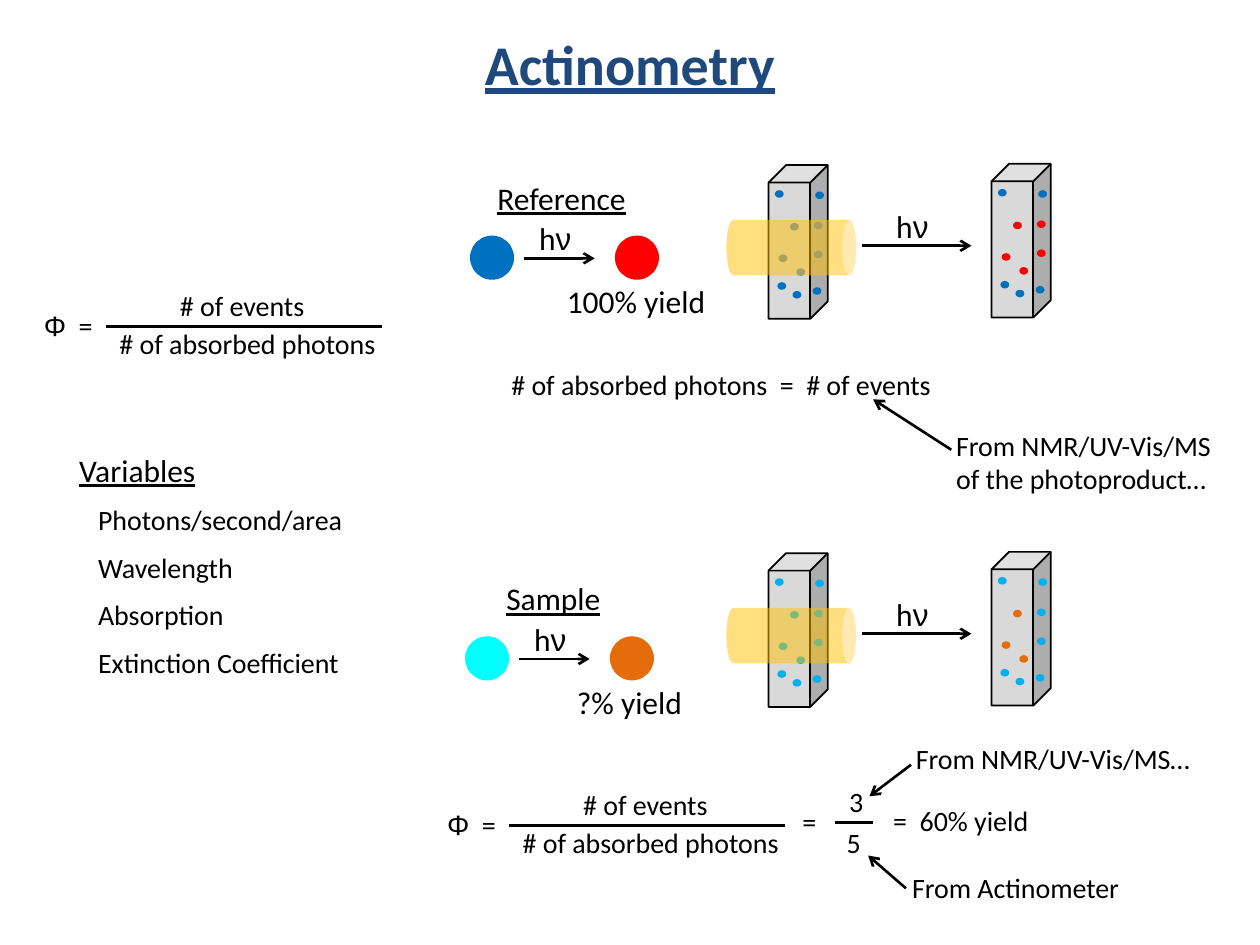
from lxml import etree
from pptx import Presentation
from pptx.dml import color
from pptx.enum import shapes, text
from pptx.oxml import ns
from pptx.util import Inches, Pt

COLORS = dict(black="000000", title="1F497D", glass="D9D9D9", beam="FFC000",
              blue="0070C0", steel="4F81BD", red="FF0000", sky="00B0F0",
              cyan="00FFFF", orange="E46C0A")
SHAPE = shapes.MSO_SHAPE

# Molecule places, measured from the corner of the cuvette
MOLECULES = [(0.05, 0.2), (0.17, 0.46), (0.08, 0.71), (0.19, 1.0), (0.07, 0.93),
             (0.36, 0.45), (0.36, 0.68), (0.35, 0.97), (0.22, 0.82), (0.37, 0.21)]
EXPERIMENTS = [
    dict(top=1.31, idle="blue", lit="steel", product="red", reacted={1, 2, 5, 6, 8},
         start="blue", scheme=(3.73, 1.87), name=("Reference", 3.85, 1.23),
         result=("100% yield", 4.4, 1.31)),
    dict(top=4.39, idle="sky", lit="sky", product="orange", reacted={1, 2, 8},
         start="cyan", scheme=(3.69, 5.05), name=("Sample", 3.92, 0.96),
         result=("?% yield", 4.48, 1.05)),
]
VARIABLES = ["Photons/second/area", "Wavelength", "Absorption", "Extinction Coefficient"]
YIELD_FORMULAS = [(0.25, 2.4), (3.45, 6.36)]
# Wording, left, top, width
RATIO = [("= ", 6.27, 6.34, 0.36), ("3", 6.64, 6.18, 0.32), ("5", 6.62, 6.5, 0.32)]
STATEMENTS = [
    ("# of absorbed photons  =  # of events", 3.96, 2.87, 3.58),
    ("=  60% yield", 6.99, 6.33, 1.29),
    ("From Actinometer", 7.14, 6.86, 1.87),
    ("From NMR/UV-Vis/MS…", 7.17, 5.84, 2.42),
]
POINTERS = [((7.19, 7.05), (6.89, 6.79)), ((7.23, 6.07), (6.9, 6.32)),
            ((7.55, 3.57), (6.93, 3.17))]

deck = Presentation()
deck.slide_width, deck.slide_height = Inches(10), Inches(7.5)
slide = deck.slides.add_slide(deck.slide_layouts[6])


def rgb(name):
    """Look up a named colour."""
    return color.RGBColor.from_string(COLORS[name])


def style(run, size, font="Calibri", ink="black", underline=False, bold=False):
    """Format one run."""
    run.font.size, run.font.name = Pt(size), font
    run.font.color.rgb = rgb(ink)
    run.font.underline, run.font.bold = underline, bold


def label(parent, parts, left, top, width, height=0.37, size=16, wrap=False, **look):
    """Add a text box; parts is a string or a list of (wording, font) pairs."""
    box = parent.shapes.add_textbox(*map(Inches, (left, top, width, height)))
    box.text_frame.word_wrap = wrap
    paragraph = box.text_frame.paragraphs[0]
    for wording, font in [(parts, "Calibri")] if isinstance(parts, str) else parts:
        run = paragraph.add_run()
        run.text = wording
        style(run, size, font, **look)
    return box


def solid(parent, kind, left, top, width, height, fill, outlined=False):
    """Add a filled preset shape."""
    part = parent.shapes.add_shape(kind, *map(Inches, (left, top, width, height)))
    part.shadow.inherit = False
    part.fill.solid()
    part.fill.fore_color.rgb = rgb(fill)
    if outlined:
        part.line.color.rgb, part.line.width = rgb("black"), Pt(1)
    else:
        part.line.fill.background()
    return part


def rule(parent, start, end, arrow=False):
    """Add a straight line, with an arrowhead at its end if asked."""
    line = parent.shapes.add_connector(shapes.MSO_CONNECTOR.STRAIGHT,
                                       *map(Inches, (*start, *end)))
    line.line.color.rgb, line.line.width = rgb("black"), Pt(1.5)
    if arrow:
        etree.SubElement(line.line._get_or_add_ln(), ns.qn("a:tailEnd"), type="arrow")
    etree.SubElement(line._element.spPr, ns.qn("a:effectLst"))


def light_arrow(left, top, length):
    """Add a reaction arrow with the photon symbol above it."""
    rule(slide, (left, top), (left + length, top), arrow=True)
    middle = left + length / 2
    label(slide, [("h", "Calibri"), ("ν", "Arial")], middle - 0.26, top - 0.36,
          0.53, 0.4, 18, wrap=True)


def cuvette(left, top, idle, changed, reacted):
    """Add a cuvette whose reacted molecules have another colour."""
    group = slide.shapes.add_group_shape()
    glass = solid(group, SHAPE.CUBE, left, top, 0.47, 1.22, "glass", outlined=True)
    glass.adjustments[0] = 0.295
    for index, (dx, dy) in enumerate(MOLECULES):
        solid(group, SHAPE.OVAL, left + dx, top + dy, 0.07, 0.06,
              changed if index in reacted else idle)


def experiment(top, idle, lit, product, reacted, start, scheme, name, result):
    """Add the irradiated cuvettes and the reaction scheme."""
    cuvette(6.1, top, idle, lit, reacted)
    light_arrow(6.84, top + 0.64, 0.87)
    cuvette(7.87, top - 0.01, idle, product, reacted)
    beam = solid(slide, SHAPE.CAN, 6.06, top + 0.14, 0.44, 1.03, "beam")
    beam.rotation = 90
    tint = beam._element.spPr.find(".//" + ns.qn("a:srgbClr"))
    etree.SubElement(tint, ns.qn("a:alpha"), val="50000")

    left, row = scheme
    solid(slide, SHAPE.OVAL, left, row, 0.35, 0.35, start)
    light_arrow(left + 0.43, row + 0.18, 0.56)
    solid(slide, SHAPE.OVAL, left + 1.15, row, 0.35, 0.35, product)
    for (wording, x, width), dy, underline in ((name, -0.5, True), (result, 0.32, False)):
        label(slide, wording, x, row + dy, width, 0.4, 18, underline=underline)


def yield_formula(left, top):
    """Add the quantum yield fraction."""
    group = slide.shapes.add_group_shape()
    label(group, [("Φ", "Arial"), ("  = ", "Calibri")], left, top, 0.64)
    label(group, "# of events", left + 1.08, top - 0.16, 1.2)
    label(group, "# of absorbed photons", left + 0.6, top + 0.14, 2.26)
    rule(group, (left + 2.78, top + 0.19), (left + 0.59, top + 0.19))


for setup in EXPERIMENTS:
    experiment(**setup)

variables = label(slide, "Variables", 0.53, 3.53, 2.45, 1.93, 18, wrap=True, underline=True)
for variable in VARIABLES:
    item = variables.text_frame.add_paragraph()
    item.text = variable
    item._p.get_or_add_pPr().set("marL", str(Inches(0.15)))
    style(item.runs[0], 16)
for item in variables.text_frame.paragraphs:
    item.space_after = Pt(8)

for corner in YIELD_FORMULAS:
    yield_formula(*corner)
ratio = slide.shapes.add_group_shape()
for entry in RATIO:
    label(ratio, *entry)
rule(ratio, (6.93, 6.53), (6.63, 6.53))

for statement in STATEMENTS:
    label(slide, *statement)
label(slide, "From NMR/UV-Vis/MS of the photoproduct…", 7.49, 3.35, 2.3, 0.64, wrap=True)
for tail, tip in POINTERS:
    rule(slide, tail, tip, arrow=True)

title = label(slide, "Actinometry", 0.5, 0, 9, 1, 32, wrap=True,
              ink="title", underline=True, bold=True)
title.text_frame.vertical_anchor = text.MSO_ANCHOR.MIDDLE
title.text_frame.paragraphs[0].alignment = text.PP_ALIGN.CENTER

deck.save("out.pptx")
